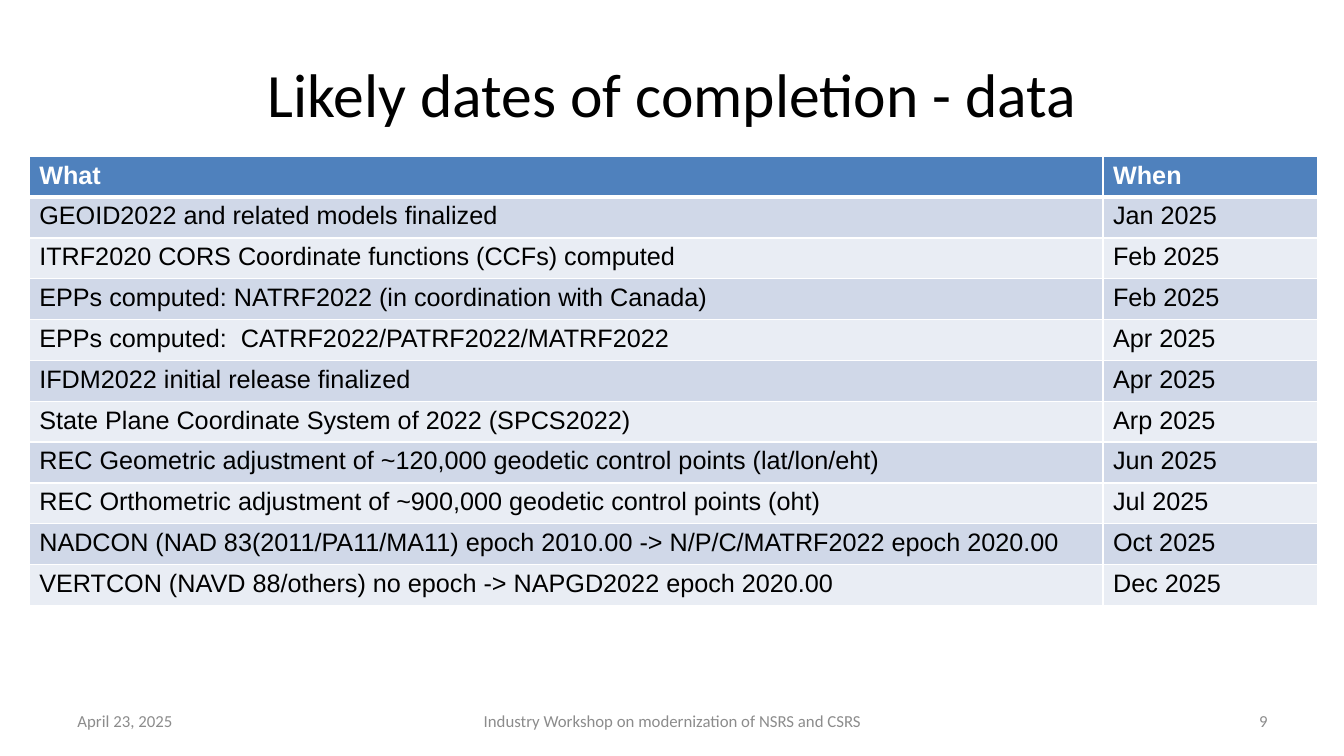
from dataclasses import dataclass

from lxml.etree import SubElement
from pptx import Presentation
from pptx.dml.color import RGBColor
from pptx.enum.text import MSO_ANCHOR, PP_ALIGN
from pptx.oxml.ns import qn
from pptx.util import Inches, Pt


@dataclass(frozen=True)
class Theme:
    heading_font: str = "Calibri"
    table_font: str = "Arial"
    title_size: int = 44
    table_size: int = 18
    footer_size: int = 12
    ink: str = "000000"
    footer_ink: str = "8C8C8C"
    white: str = "FFFFFF"
    header_fill: str = "4F81BD"
    bands: tuple = ("D0D8E8", "E9EDF4")
    rule: int = 1
    header_rule: int = 3


THEME = Theme()

TITLE = "Likely dates of completion - data"
FOOTER = ("April 23, 2025", "Industry Workshop on modernization of NSRS and CSRS", "9")
SCHEDULE = [
    ("What", "When"),
    ("GEOID2022 and related models finalized", "Jan 2025"),
    ("ITRF2020 CORS Coordinate functions (CCFs) computed", "Feb 2025"),
    ("EPPs computed: NATRF2022 (in coordination with Canada)", "Feb 2025"),
    ("EPPs computed:  CATRF2022/PATRF2022/MATRF2022", "Apr 2025"),
    ("IFDM2022 initial release finalized", "Apr 2025"),
    ("State Plane Coordinate System of 2022 (SPCS2022)", "Arp 2025"),
    ("REC Geometric adjustment of ~120,000 geodetic control points (lat/lon/eht)", "Jun 2025"),
    ("REC Orthometric adjustment of ~900,000 geodetic control points (oht)", "Jul 2025"),
    ("NADCON (NAD 83(2011/PA11/MA11) epoch 2010.00 -> N/P/C/MATRF2022 epoch 2020.00", "Oct 2025"),
    ("VERTCON (NAVD 88/others) no epoch -> NAPGD2022 epoch 2020.00", "Dec 2025"),
]


def style_font(font, name, size, color, bold=False):
    font.name = name
    font.size = Pt(size)
    font.bold = bold
    font.color.rgb = RGBColor.from_string(color)


def add_label(slide, box, text, size, color, align):
    label = slide.shapes.add_textbox(*map(Inches, box))
    frame = label.text_frame
    frame.word_wrap = True
    frame.vertical_anchor = MSO_ANCHOR.MIDDLE
    frame.text = text
    paragraph = frame.paragraphs[0]
    paragraph.alignment = align
    style_font(paragraph.runs[0].font, THEME.heading_font, size, color)


def add_title(slide, box):
    add_label(slide, box, TITLE, THEME.title_size, THEME.ink, PP_ALIGN.CENTER)


def add_footer(slide, box):
    """Place date, event and page number at the left, centre and right of the box."""
    left, top, width, height = box
    side, middle = 3.11, 4.22
    slots = (
        (left, side, PP_ALIGN.LEFT),
        (left + (width - middle) / 2, middle, PP_ALIGN.CENTER),
        (left + width - side, side, PP_ALIGN.RIGHT),
    )
    for text, (x, slot_width, align) in zip(FOOTER, slots):
        add_label(slide, (x, top, slot_width, height), text,
                  THEME.footer_size, THEME.footer_ink, align)


def set_borders(cell, top, bottom):
    """Draw white borders; they must precede the fill in the cell properties."""
    properties = cell._tc.get_or_add_tcPr()
    widths = {"a:lnL": THEME.rule, "a:lnR": THEME.rule, "a:lnT": top, "a:lnB": bottom}
    for tag, width in widths.items():
        line = SubElement(properties, qn(tag), w=str(Pt(width)))
        fill = SubElement(line, qn("a:solidFill"))
        SubElement(fill, qn("a:srgbClr"), val=THEME.white)


def add_schedule(slide, box):
    left, top, width, height = box
    row_count = len(SCHEDULE)
    table = slide.shapes.add_table(row_count, 2, *map(Inches, box)).table
    when_width = width / 6
    table.columns[0].width = Inches(width - when_width)
    table.columns[1].width = Inches(when_width)
    for row_index, entries in enumerate(SCHEDULE):
        table.rows[row_index].height = Inches(height / row_count)
        is_header = row_index == 0
        fill = THEME.header_fill if is_header else THEME.bands[(row_index - 1) % 2]
        ink = THEME.white if is_header else THEME.ink
        top_rule = THEME.header_rule if row_index == 1 else THEME.rule
        bottom_rule = THEME.header_rule if is_header else THEME.rule
        for column_index, entry in enumerate(entries):
            cell = table.cell(row_index, column_index)
            set_borders(cell, top_rule, bottom_rule)
            cell.fill.solid()
            cell.fill.fore_color.rgb = RGBColor.from_string(fill)
            cell.text_frame.text = entry
            style_font(cell.text_frame.paragraphs[0].runs[0].font,
                       THEME.table_font, THEME.table_size, ink, is_header)


def main():
    presentation = Presentation()
    presentation.slide_width = Inches(13.33)
    presentation.slide_height = Inches(7.5)
    slide = presentation.slides.add_slide(presentation.slide_layouts[6])
    add_title(slide, (0.67, 0.3, 12, 1.25))
    add_footer(slide, (0.67, 6.95, 12, 0.4))
    add_schedule(slide, (0.29, 1.55, 12.78, 4.46))
    presentation.save("out.pptx")


if __name__ == "__main__":
    main()
